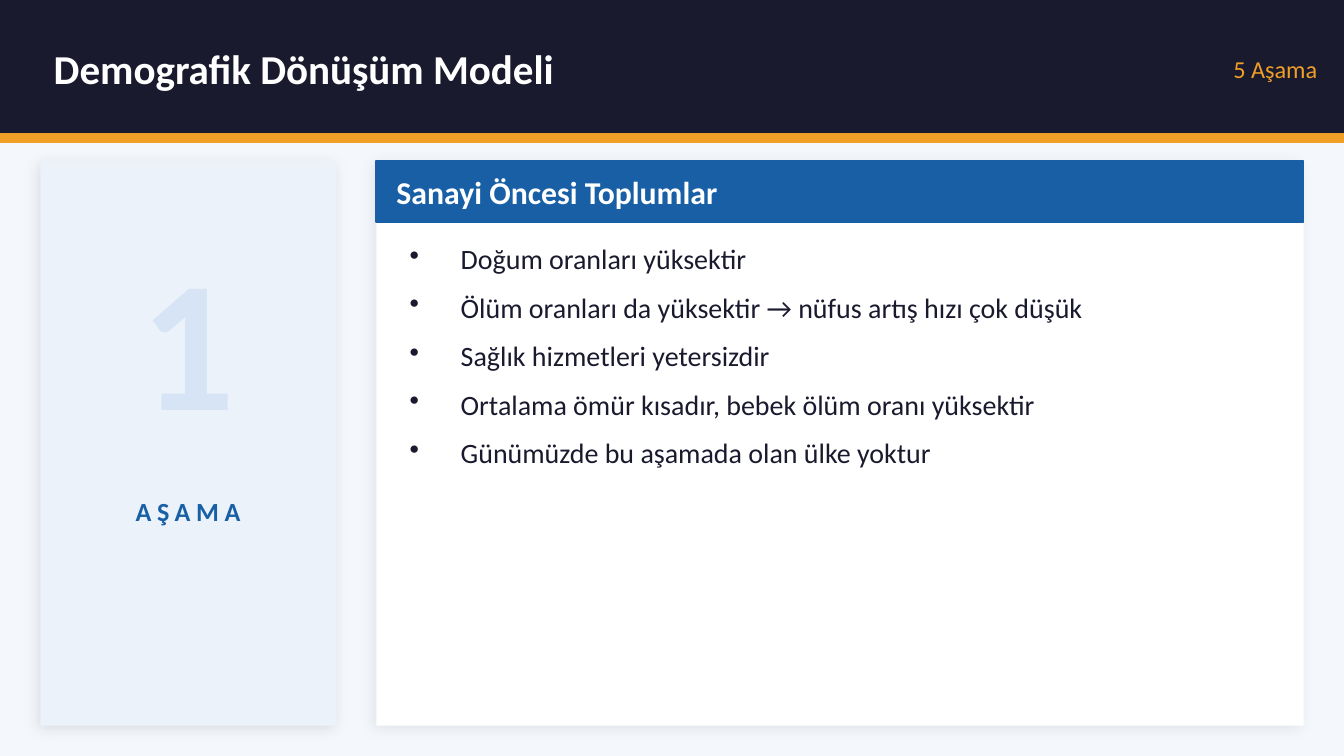
from lxml import etree
from pptx import Presentation
from pptx.dml.color import RGBColor
from pptx.enum.shapes import MSO_SHAPE
from pptx.enum.text import MSO_ANCHOR, PP_ALIGN
from pptx.oxml.ns import qn
from pptx.util import Inches, Pt

RECT = MSO_SHAPE.RECTANGLE
TOP, MIDDLE = MSO_ANCHOR.TOP, MSO_ANCHOR.MIDDLE
LEFT, CENTER, RIGHT = PP_ALIGN.LEFT, PP_ALIGN.CENTER, PP_ALIGN.RIGHT

TITLE = "Demografik Dönüşüm Modeli"
TAG = "5 Aşama"
STAGE_NUMBER, STAGE_LABEL = "1", "AŞAMA"
HEADING = "Sanayi Öncesi Toplumlar"
BULLETS = [
    "Doğum oranları yüksektir",
    "Ölüm oranları da yüksektir → nüfus artış hızı çok düşük",
    "Sağlık hizmetleri yetersizdir",
    "Ortalama ömür kısadır, bebek ölüm oranı yüksektir",
    "Günümüzde bu aşamada olan ülke yoktur",
]

THEME = {
    "font": "Calibri",
    "bg": "F4F7FC", "dark": "1A1A2E", "accent": "EF9F27", "blue": "185FA5",
    "pale": "EBF2FA", "ghost": "D6E4F5", "white": "FFFFFF",
    "title": 22, "tag": 13, "number": 100, "label": 14, "heading": 17, "body": 15,
}

WIDTH = 10
HEIGHT = WIDTH * 9 / 16
CARD_TOP, CARD_H = 1.2, 4.2
STAGE_X, STAGE_W = 0.3, 2.2
PANEL_X, PANEL_W, PAD = 2.8, 6.9, 0.15
TEXT_X, TEXT_W = PANEL_X + PAD, PANEL_W - 2 * PAD


def color(name):
    return RGBColor.from_string(THEME[name])


def add_shadow(sp, opacity):
    effects = sp._element.spPr.find(qn("a:effectLst"))
    shadow = etree.SubElement(effects, qn("a:outerShdw"), blurRad=str(Pt(8)),
                              dist=str(Pt(2)), dir=str(135 * 60000),
                              algn="bl", rotWithShape="0")
    clr = etree.SubElement(shadow, qn("a:srgbClr"), val="000000")
    etree.SubElement(clr, qn("a:alpha"), val=str(opacity * 1000))


def add_rect(s, box, fill, outlined=True, shadow=0):
    sp = s.shapes.add_shape(RECT, *map(Inches, box))
    sp.shadow.inherit = False
    sp.fill.solid()
    sp.fill.fore_color.rgb = color(fill)
    if outlined:
        sp.line.color.rgb = color(fill)
        sp.line.width = Pt(1)
    else:
        sp.line.fill.background()
    if shadow:
        add_shadow(sp, shadow)


def add_bullet(p):
    pPr = p._p.get_or_add_pPr()
    pPr.set("marL", str(Inches(0.38)))
    pPr.set("indent", str(-Inches(0.38)))
    etree.SubElement(pPr, qn("a:buSzPct"), val="100000")
    etree.SubElement(pPr, qn("a:buChar"), char="•")
    p.space_after = Pt(8)


def add_text(s, box, lines, size, ink, bold=False, align=LEFT, anchor=MIDDLE,
             inset=True, bullets=False, spacing=0):
    tf = s.shapes.add_textbox(*map(Inches, box)).text_frame
    tf.word_wrap = True
    tf.vertical_anchor = anchor
    if not inset:
        for side in ("left", "top", "right", "bottom"):
            setattr(tf, f"margin_{side}", 0)
    style = {"name": THEME["font"], "size": Pt(THEME[size]), "bold": bold}
    for i, line in enumerate(lines):
        p = tf.add_paragraph() if i else tf.paragraphs[0]
        p.alignment = align
        if bullets:
            add_bullet(p)
        r = p.add_run()
        r.text = line
        for key, value in style.items():
            setattr(r.font, key, value)
        r.font.color.rgb = color(ink)
        if spacing:
            r._r.get_or_add_rPr().set("spc", str(spacing * 100))


def main():
    prs = Presentation()
    prs.slide_width, prs.slide_height = Inches(WIDTH), Inches(HEIGHT)
    s = prs.slides.add_slide(prs.slide_layouts[6])
    s.background.fill.solid()
    s.background.fill.fore_color.rgb = color("bg")

    add_rect(s, (0, 0, WIDTH, 1), "dark")
    add_rect(s, (0, 1, WIDTH, 0.06), "accent")
    add_text(s, (0.4, 0.1, 7.5, 0.82), [TITLE], "title", "white", bold=True, inset=False)
    add_text(s, (7.8, 0.1, 2, 0.82), [TAG], "tag", "accent", align=RIGHT, inset=False)

    add_rect(s, (STAGE_X, CARD_TOP, STAGE_W, CARD_H), "pale", outlined=False, shadow=10)
    add_text(s, (STAGE_X, 1.5, STAGE_W, 2), [STAGE_NUMBER], "number", "ghost",
             bold=True, align=CENTER)
    add_text(s, (STAGE_X, 3.5, STAGE_W, 0.6), [STAGE_LABEL], "label", "blue",
             bold=True, align=CENTER, spacing=3)

    add_rect(s, (PANEL_X, CARD_TOP, PANEL_W, CARD_H), "white", outlined=False, shadow=8)
    add_rect(s, (PANEL_X, CARD_TOP, PANEL_W, 0.45), "blue")
    add_text(s, (TEXT_X, CARD_TOP + 0.02, TEXT_W, 0.42), [HEADING], "heading", "white",
             bold=True, inset=False)
    add_text(s, (TEXT_X, CARD_TOP + 0.55, TEXT_W, 3.5), BULLETS, "body", "dark",
             anchor=TOP, bullets=True)

    prs.save("out.pptx")


if __name__ == "__main__":
    main()
